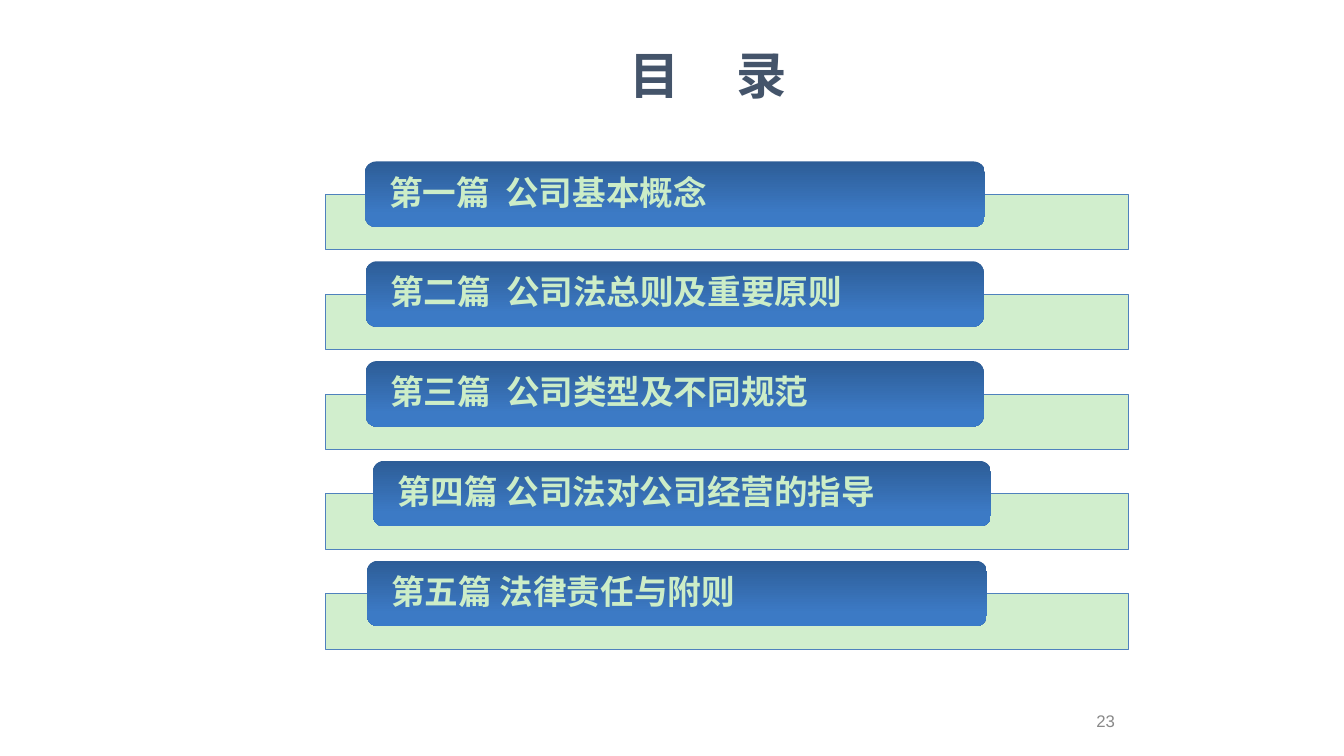
"""Build the table-of-contents slide of a company-law course."""
from copy import deepcopy
from dataclasses import dataclass

from lxml import etree
from pptx import Presentation
from pptx.dml.color import RGBColor
from pptx.enum.shapes import MSO_SHAPE
from pptx.enum.text import MSO_ANCHOR, MSO_AUTO_SIZE, PP_ALIGN
from pptx.oxml.ns import qn
from pptx.util import Cm, Pt

RECT, ROUND = MSO_SHAPE.RECTANGLE, MSO_SHAPE.ROUNDED_RECTANGLE
TOP, MIDDLE = MSO_ANCHOR.TOP, MSO_ANCHOR.MIDDLE
LEFT, CENTER, RIGHT = PP_ALIGN.LEFT, PP_ALIGN.CENTER, PP_ALIGN.RIGHT
NO_AUTOFIT = MSO_AUTO_SIZE.NONE
TITLE_ONLY = 5

TITLE = ("目", "录")
TITLE_GAP = 32
PAGE = "23"
# part, name, extra gap (pt), tab left (cm), tab width (cm)
CHAPTERS = [
    ("第一篇", "公司基本概念", 5.4, 9.2, 15.62),
    ("第二篇", "公司法总则及重要原则", 5.4, 9.22, 15.57),
    ("第三篇", "公司类型及不同规范", 5.4, 9.22, 15.57),
    ("第四篇", "公司法对公司经营的指导", 0, 9.4, 15.57),
    ("第五篇", "法律责任与附则", 0, 9.25, 15.62),
]
BAR_LEFT, BAR_TOP, BAR_WIDTH, BAR_HEIGHT = 8.2, 4.9, 20.24, 1.4
TAB_TOP, TAB_HEIGHT, PITCH = 4.07, 1.65, 2.515


@dataclass(frozen=True)
class Theme:
    """Colours, fonts and type sizes."""
    title: str = "44546A"
    pale: str = "CCEDC7"
    pale_alpha: int = 89
    outline: str = "4F81BD"
    page: str = "898989"
    gradient: tuple = ((0, "2D5D97"), (0.8, "3C7AC5"), (1, "397BC9"))
    font: str = "Noto Sans CJK SC"
    page_font: str = "Arial"
    title_size: int = 36
    chapter_size: int = 24
    page_size: int = 12


THEME = Theme()


def rgb(value):
    """Return a colour from its hex value."""
    return RGBColor.from_string(value)


def add_run(p, text, size, color, font, bold=False, spacing=0):
    """Add a formatted run with optional letter spacing in points."""
    r = p.add_run()
    r.text = text
    r.font.size, r.font.bold, r.font.name = Pt(size), bold, font
    r.font.color.rgb = rgb(color)
    props = r.font._element
    etree.SubElement(props, qn("a:ea")).set("typeface", font)
    if spacing:
        props.set("spc", str(round(spacing * 100)))


def add_pair(p, first, second, gap, size, color):
    """Write two bold words with a widened space between them."""
    for text, spacing in ((first, 0), (" ", gap), (second, 0)):
        add_run(p, text, size, color, THEME.font, True, spacing)


def set_frame(tf, anchor, align, inset=(0.25, 0.13)):
    """Prepare a text frame and return its first paragraph."""
    tf.word_wrap, tf.auto_size, tf.vertical_anchor = True, NO_AUTOFIT, anchor
    tf.margin_left = tf.margin_right = Cm(inset[0])
    tf.margin_top = tf.margin_bottom = Cm(inset[1])
    p = tf.paragraphs[0]
    p.alignment = align
    return p


def add_bar(slide, top):
    """Add the translucent bar behind a chapter tab."""
    sp = slide.shapes.add_shape(RECT, Cm(BAR_LEFT), Cm(top), Cm(BAR_WIDTH), Cm(BAR_HEIGHT))
    sp.shadow.inherit = False
    sp.fill.solid()
    sp.fill.fore_color.rgb = rgb(THEME.pale)
    color = sp._element.spPr.find(".//" + qn("a:srgbClr"))
    etree.SubElement(color, qn("a:alpha")).set("val", str(THEME.pale_alpha * 1000))
    sp.line.color.rgb = rgb(THEME.outline)
    sp.line.width = Pt(0.75)


def add_tab(slide, top, part, name, gap, left, width):
    """Add a gradient tab holding a chapter heading."""
    sp = slide.shapes.add_shape(ROUND, Cm(left), Cm(top), Cm(width), Cm(TAB_HEIGHT))
    sp.shadow.inherit = False
    sp.adjustments[0] = 0.167
    sp.line.fill.background()
    sp.fill.gradient()
    sp.fill.gradient_angle = 270
    stops = sp._element.spPr.find(".//" + qn("a:gsLst"))
    stops.append(deepcopy(stops[-1]))
    for stop, (position, color) in zip(sp.fill.gradient_stops, THEME.gradient):
        stop.position = position
        stop.color.rgb = rgb(color)
    p = set_frame(sp.text_frame, MIDDLE, LEFT, (0.53, 0))
    p.line_spacing = 0.9
    add_pair(p, part, name, gap, THEME.chapter_size, THEME.pale)


def main():
    """Build and save the slide."""
    prs = Presentation()
    prs.slide_width, prs.slide_height = Cm(33.87), Cm(19.05)
    slide = prs.slides.add_slide(prs.slide_layouts[TITLE_ONLY])

    title = slide.shapes.title
    title.left, title.top, title.width, title.height = Cm(14.15), Cm(0.99), Cm(7.39), Cm(1.78)
    p = set_frame(title.text_frame, TOP, CENTER)
    add_pair(p, *TITLE, TITLE_GAP, THEME.title_size, THEME.title)

    for row, chapter in enumerate(CHAPTERS):
        add_bar(slide, BAR_TOP + row * PITCH)
        add_tab(slide, TAB_TOP + row * PITCH, *chapter)

    page = slide.shapes.add_textbox(Cm(22.43), Cm(17.65), Cm(5.92), Cm(1.02))
    p = set_frame(page.text_frame, MIDDLE, RIGHT)
    add_run(p, PAGE, THEME.page_size, THEME.page, THEME.page_font)

    prs.save("out.pptx")


if __name__ == "__main__":
    main()
